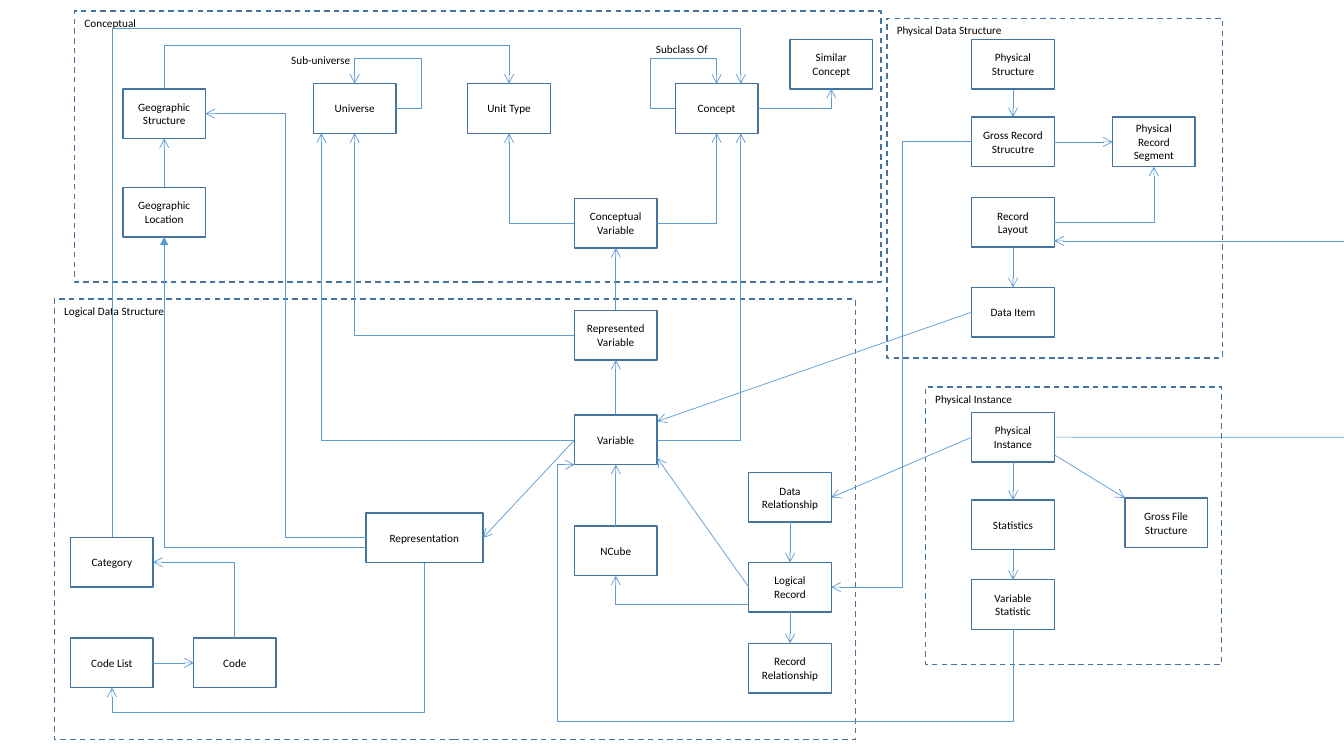
from lxml.etree import SubElement
from pptx import Presentation
from pptx.dml.color import RGBColor
from pptx.enum.dml import MSO_LINE_DASH_STYLE as Dash
from pptx.enum.shapes import MSO_CONNECTOR as ConnectorType, MSO_SHAPE as ShapeType
from pptx.enum.text import MSO_ANCHOR as Anchor, PP_ALIGN as Align
from pptx.oxml.ns import qn
from pptx.util import Cm, Pt

COLORS = {"border": "43739E", "link": "5B9BD5", "text": "000000"}
TOP, LEFT, BOTTOM, RIGHT = range(4)
NODE_WIDTH, NODE_HEIGHT = 2.08, 1.25
SLIDE_WIDTH, SLIDE_HEIGHT = 33.87, 19.05
WIDE_NODES = {"Representation": 2.95}

CONCEPTUAL = {
    "Concept": (15.14, 1.83),
    "Universe": (6.02, 1.83),
    "Unit Type": (9.91, 1.83),
    "Geographic Structure": (1.22, 1.96),
    "Geographic Location": (1.22, 4.44),
    "Conceptual Variable": (12.6, 4.72),
    "Similar Concept": (18.03, 0.71),
}
CONCEPTUAL_LABELS = {"Sub-universe": (5.21, 0.94, 2.03), "Subclass Of": (14.4, 0.66, 1.83)}
LOGICAL = {
    "Represented Variable": (13.11, 0.28),
    "Variable": (13.11, 2.92),
    "NCube": (13.11, 5.72),
    "Category": (0.41, 6),
    "Code List": (0.41, 8.54),
    "Code": (3.51, 8.54),
    "Representation": (7.85, 5.39),
    "Data Relationship": (17.5, 4.37),
    "Logical Record": (17.5, 6.63),
    "Record Relationship": (17.5, 8.67),
}
PHYSICAL_DATA = {
    "Physical Structure": (2.14, 0.53),
    "Gross Record Strucutre": (2.14, 2.49),
    "Record Layout": (2.14, 4.52),
    "Data Item": (2.14, 6.78),
    "Physical Record Segment": (5.69, 2.49),
}
PHYSICAL_INSTANCE = {
    "Physical Instance": (1.17, 0.64),
    "Statistics": (1.17, 2.85),
    "Variable Statistic": (1.17, 4.86),
    "Gross File Structure": (5.03, 2.8),
}
REGIONS = [
    ("Conceptual", (1.88, 0.28, 20.32, 6.83), CONCEPTUAL, CONCEPTUAL_LABELS),
    ("Logical Data Structure", (1.37, 7.54, 20.19, 11.1), LOGICAL, {}),
    ("Physical Data Structure", (22.35, 0.46, 8.46, 8.56), PHYSICAL_DATA, {}),
    ("Physical Instance", (23.32, 9.75, 7.47, 6.99), PHYSICAL_INSTANCE, {}),
]

UPWARD = [
    ("Represented Variable", "Conceptual Variable"),
    ("Variable", "Represented Variable"),
    ("NCube", "Variable"),
    ("Geographic Location", "Geographic Structure"),
]
DOWNWARD = [
    ("Data Relationship", "Logical Record"),
    ("Logical Record", "Record Relationship"),
    ("Physical Structure", "Gross Record Strucutre"),
    ("Record Layout", "Data Item"),
    ("Physical Instance", "Statistics"),
    ("Statistics", "Variable Statistic"),
]
STRAIGHT = [
    *[((lower, TOP), (upper, BOTTOM)) for lower, upper in UPWARD],
    *[((upper, BOTTOM), (lower, TOP)) for upper, lower in DOWNWARD],
    (("Code List", RIGHT), ("Code", LEFT)),
    (("Variable", LEFT), ("Representation", RIGHT)),
    (("Logical Record", LEFT), (16.56, 11.54)),
    (("Gross Record Strucutre", RIGHT), ("Physical Record Segment", LEFT)),
    (("Data Item", LEFT), (16.56, 10.62)),
    (("Physical Instance", LEFT), ("Data Relationship", RIGHT)),
    ((26.57, 11.46), (28.35, 12.55)),
    ((18.67, 0.71), (18.67, 2.11)),
    ((SLIDE_WIDTH, 6.07), (26.57, 6.07)),
]
PLAIN = [
    (("Category", TOP), (2.82, 0.71)),
    ((2.82, 0.71), (18.67, 0.71)),
    (("Physical Instance", RIGHT), (SLIDE_WIDTH, 11.02)),
]
BENT = [
    (("Conceptual Variable", LEFT), ("Unit Type", BOTTOM), []),
    (("Conceptual Variable", RIGHT), ("Concept", BOTTOM), []),
    (("Variable", RIGHT), (18.67, 3.36), []),
    (("Represented Variable", LEFT), ("Universe", BOTTOM), []),
    (("Variable", LEFT), (8.1, 3.36), []),
    (("Universe", RIGHT), ("Universe", TOP), [10.62, 1.47]),
    (("Geographic Structure", TOP), ("Unit Type", TOP), [1.14]),
    (("Code", TOP), ("Category", RIGHT), []),
    (("Representation", LEFT), ("Geographic Structure", RIGHT), [7.19]),
    (("Representation", BOTTOM), ("Code List", BOTTOM), [17.96]),
    (("Concept", LEFT), ("Concept", TOP), [16.38, 1.47]),
    (("Concept", RIGHT), ("Similar Concept", BOTTOM), []),
    ((18.87, 15.24), ("NCube", BOTTOM), []),
    (("Gross Record Strucutre", LEFT), ("Logical Record", RIGHT), [22.73]),
    (("Record Layout", RIGHT), ("Physical Record Segment", BOTTOM), []),
    (("Variable Statistic", BOTTOM), (14.48, 11.71), [18.19, 14.05]),
]


def color(name):
    return RGBColor.from_string(COLORS[name])


def write(shape, text, align, anchor, wrap=True):
    frame = shape.text_frame
    frame.word_wrap = wrap
    frame.vertical_anchor = anchor
    paragraph = frame.paragraphs[0]
    paragraph.alignment = align
    run = paragraph.add_run()
    run.text = text
    run.font.name = "Calibri"
    run.font.size = Pt(8)
    run.font.color.rgb = color("text")


def add_rectangle(slide, box):
    shape = slide.shapes.add_shape(ShapeType.RECTANGLE, *map(Cm, box))
    shape.shadow.inherit = False
    shape.fill.background()
    shape.line.color.rgb = color("border")
    shape.line.width = Pt(1)
    return shape


def add_region(slide, title, box, nodes, labels):
    left, top = box[:2]
    shapes = {}
    for name, (x, y) in nodes.items():
        width = WIDE_NODES.get(name, NODE_WIDTH)
        shapes[name] = add_rectangle(slide, (left + x, top + y, width, NODE_HEIGHT))
        write(shapes[name], name, Align.CENTER, Anchor.MIDDLE)
    for text, (x, y, width) in labels.items():
        label = slide.shapes.add_textbox(Cm(left + x), Cm(top + y), Cm(width), Cm(0.61))
        write(label, text, Align.LEFT, Anchor.TOP, wrap=False)
    panel = add_rectangle(slide, box)
    panel.line.dash_style = Dash.DASH
    write(panel, title, Align.LEFT, Anchor.TOP)
    return shapes


def bend(connector, lanes, vertical):
    start = (connector.begin_x, connector.begin_y)
    span = (connector.end_x - start[0], connector.end_y - start[1])
    center = [first + length / 2 for first, length in zip(start, span)]
    if vertical:
        start, span = start[::-1], span[::-1]
    width, height = map(abs, span)
    connector.left, connector.top = int(center[0] - width / 2), int(center[1] - height / 2)
    connector.width, connector.height = width, height
    properties = connector._element.spPr
    frame = properties.find(qn("a:xfrm"))
    frame.set("rot", "5400000" if vertical else "0")
    frame.set("flipH", str(int(span[0] < 0)))
    frame.set("flipV", str(int((span[1] < 0) != vertical)))
    geometry = properties.find(qn("a:prstGeom"))
    geometry.set("prst", f"bentConnector{len(lanes) + 2}")
    guides = geometry.find(qn("a:avLst"))
    for index, lane in enumerate(lanes):
        ratio = round((Cm(lane) - start[index]) / span[index] * 100000)
        SubElement(guides, qn("a:gd"), name=f"adj{index + 1}", fmla=f"val {ratio}")


def add_link(slide, nodes, start, end, lanes=None, arrow="arrow"):
    joined = [isinstance(place[0], str) for place in (start, end)]
    points = [(0, 0) if on_node else tuple(map(Cm, place))
              for on_node, place in zip(joined, (start, end))]
    kind = ConnectorType.STRAIGHT if lanes is None else ConnectorType.ELBOW
    connector = slide.shapes.add_connector(kind, *points[0], *points[1])
    if joined[0]:
        connector.begin_connect(nodes[start[0]], start[1])
    if joined[1]:
        connector.end_connect(nodes[end[0]], end[1])
    if lanes is not None:
        bend(connector, lanes, joined[0] and start[1] in (TOP, BOTTOM))
    connector.line.color.rgb = color("link")
    connector.line.width = Pt(0.5)
    properties = connector._element.spPr
    if arrow:
        SubElement(properties.find(qn("a:ln")), qn("a:tailEnd"), type=arrow)
    SubElement(properties, qn("a:effectLst"))


def main():
    presentation = Presentation()
    presentation.slide_width, presentation.slide_height = Cm(SLIDE_WIDTH), Cm(SLIDE_HEIGHT)
    slide = presentation.slides.add_slide(presentation.slide_layouts[6])
    nodes = {}
    for region in REGIONS:
        nodes.update(add_region(slide, *region))
    for link in STRAIGHT + BENT:
        add_link(slide, nodes, *link)
    for link in PLAIN:
        add_link(slide, nodes, *link, arrow=None)
    add_link(slide, nodes, (9.22, 13.79), ("Geographic Location", BOTTOM), [], "triangle")
    presentation.save("out.pptx")


if __name__ == "__main__":
    main()
